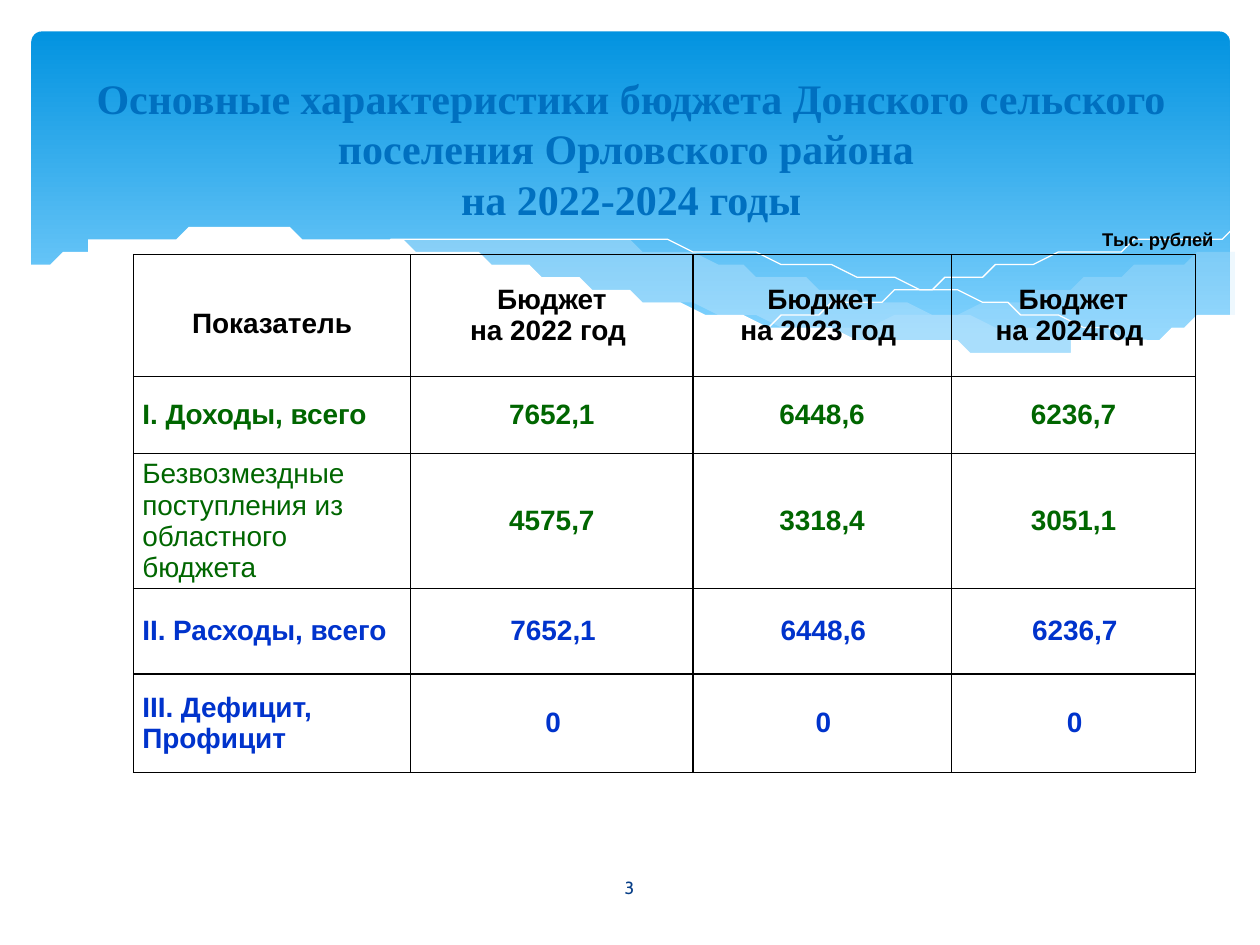
from dataclasses import dataclass
from typing import NamedTuple, Optional

from lxml.etree import SubElement
from pptx import Presentation
from pptx.dml.color import RGBColor
from pptx.enum.shapes import MSO_SHAPE
from pptx.enum.text import MSO_ANCHOR, MSO_AUTO_SIZE, PP_ALIGN
from pptx.oxml.ns import qn
from pptx.util import Inches, Pt

# The slide is a grid of 100 columns by 75 rows of square cells
COLUMNS, ROWS = 100, 75
CELL = Inches(10) // COLUMNS


@dataclass(frozen=True)
class Theme:
    sky_top: str = "0293E0"
    sky_bottom: str = "83D3FE"
    wave: str = "C6E7FC"
    white: str = "FFFFFF"
    black: str = "000000"
    title: str = "0070C0"
    number: str = "073E87"
    income: str = "006600"
    spending: str = "0033CC"
    heading_font: str = "Times New Roman"
    body_font: str = "Arial"
    number_font: str = "Cabin"
    title_size: float = 24
    table_size: float = 16
    unit_size: float = 10.5
    number_size: float = 10


class Box(NamedTuple):
    left: float
    top: float
    width: float
    height: float

    def emu(self) -> list[int]:
        return [grid(v) for v in self]


class Wave(NamedTuple):
    """Edges are smooth curves through their knots, joined end to end."""
    edges: list
    fill: Optional[str] = None
    opacity: int = 100


class BudgetRow(NamedTuple):
    label: str
    values: list
    color: str
    height: float
    indent: float = 0
    bold_label: bool = True


THEME = Theme()

WAVES = [
    Wave([[(97.6, 20), (92.1, 21), (86.1, 22.3), (77.9, 24.2), (66.1, 26.5)],
          [(66.1, 26.5), (73.2, 27.4), (81.4, 27.8), (88.9, 27.2), (94.2, 25.9), (97.6, 24.7)]],
         THEME.wave, 29),
    Wave([[(89.3, 27.3), (80.7, 26), (70.6, 24), (62.9, 22.2), (55.5, 20.5), (46.5, 19.1),
           (36.1, 18.5), (28.6, 19.1)],
          [(28.6, 19.1), (36.2, 20.3), (44.9, 22.2), (56.6, 24.8), (66.5, 26.6), (76.1, 27.7),
           (83.8, 27.8), (89.3, 27.3)]],
         THEME.wave, 40),
    Wave([[(30.9, 19.5), (35.3, 18.9), (41.6, 18.7), (48.9, 19), (58.2, 20), (69.5, 21.9),
           (79.5, 24.1), (90.7, 27.2)]]),
    Wave([[(61.3, 25.7), (69.5, 23.5), (77.6, 21.6), (86.6, 19.9), (92.4, 19), (97.5, 18.5)]]),
    Wave([[(97.7, 24.6), (92, 26.5), (86.3, 27.4), (80.9, 27.7), (72.6, 27.2), (62.6, 25.8),
           (52.9, 23.9), (44.7, 22), (36.5, 20.2), (27.1, 18.8), (19.3, 18.4), (11.9, 18.7),
           (6.7, 19.7), (2.3, 21.3)],
          [(2.3, 32.9), (97.7, 32.9)]],
         THEME.white),
]

TABLE_BOX = Box(10.6, 20.2, 84.3, 41.1)
TABLE_COLUMNS = [22, 22.4, 20.5, 19.4]
HEADER = BudgetRow("Показатель",
                   ["Бюджет\nна 2022 год ", "Бюджет\nна 2023 год ", "Бюджет\nна 2024год "],
                   THEME.black, 9.7)
BUDGET = [
    HEADER,
    BudgetRow("I. Доходы, всего", ["7652,1", "6448,6", "6236,7"], THEME.income, 6.1, -0.7),
    BudgetRow("Безвозмездные поступления из областного бюджета",
              ["4575,7", "3318,4", "3051,1"], THEME.income, 10.7, -0.7, False),
    BudgetRow("II. Расходы, всего", ["7652,1", "6448,6", "6236,7"], THEME.spending, 6.8, 0.2),
    BudgetRow("III. Дефицит, Профицит", ["0", "0", "0"], THEME.spending, 7.8, 0.2),
]


def grid(value: float) -> int:
    return round(value * CELL)


def smooth(knots: list, steps: int = 6) -> list:
    """Catmull-Rom curve through the knots; two knots give a straight line."""
    if len(knots) == 2:
        return knots
    ends = [knots[0], *knots, knots[-1]]
    points = [knots[0]]
    for a, b, c, d in zip(ends, ends[1:], ends[2:], ends[3:]):
        for t in (i / steps for i in range(1, steps + 1)):
            points.append(tuple(
                (2 * q + (r - p) * t + (2 * p - 5 * q + 4 * r - u) * t ** 2
                 + (3 * q - p - 3 * r + u) * t ** 3) / 2
                for p, q, r, u in zip(a, b, c, d)))
    return points


def draw_wave(s, wave: Wave) -> None:
    points = [point for edge in wave.edges for point in smooth(edge)]
    builder = s.shapes.build_freeform(*points[0], scale=CELL)
    builder.add_line_segments(points[1:], close=wave.fill is not None)
    sp = builder.convert_to_shape()
    sp.shadow.inherit = False
    if wave.fill is None:
        sp.fill.background()
        sp.line.color.rgb = RGBColor.from_string(THEME.white)
        sp.line.width = Pt(0)
        return
    sp.line.fill.background()
    sp.fill.solid()
    sp.fill.fore_color.rgb = RGBColor.from_string(wave.fill)
    if wave.opacity < 100:
        color = sp._element.spPr.find(qn("a:solidFill"))[0]
        SubElement(color, qn("a:alpha"), val=str(wave.opacity * 1000))


def draw_sky(s) -> None:
    sp = s.shapes.add_shape(MSO_SHAPE.ROUNDED_RECTANGLE, *Box(2.5, 2.5, 95.1, 27).emu())
    sp.adjustments[0] = 0.03
    sp.shadow.inherit = False
    sp.line.fill.background()
    sp.fill.gradient()
    sp.fill.gradient_angle = 270
    stops = ((0, THEME.sky_top), (0.9, THEME.sky_bottom))
    for stop, (position, color) in zip(sp.fill.gradient_stops, stops):
        stop.position = position
        stop.color.rgb = RGBColor.from_string(color)


def style(p, font: str, size: float, color: str, bold: bool, align) -> None:
    p.alignment = align
    p.font.name, p.font.size, p.font.bold = font, Pt(size), bold
    p.font.color.rgb = RGBColor.from_string(color)


def draw_label(s, box: Box, text: str, font: str, size: float, color: str,
               bold: bool, align, anchor) -> None:
    tf = s.shapes.add_textbox(*box.emu()).text_frame
    tf.word_wrap = True
    tf.vertical_anchor = anchor
    tf.text = text
    style(tf.paragraphs[0], font, size, color, bold, align)


def place_title(s, box: Box, text: str) -> None:
    title = s.shapes.title
    title.left, title.top, title.width, title.height = box.emu()
    tf = title.text_frame
    tf.text = text
    tf.word_wrap = True
    tf.auto_size = MSO_AUTO_SIZE.NONE
    tf.vertical_anchor = MSO_ANCHOR.MIDDLE
    style(tf.paragraphs[0], THEME.heading_font, THEME.title_size, THEME.title, True,
          PP_ALIGN.CENTER)
    title._element.getparent().append(title._element)  # in front of the waves


def fill_cell(cell, text: str, color: str, bold: bool, align, indent: float) -> None:
    cell.text = text
    cell.vertical_anchor = MSO_ANCHOR.MIDDLE
    cell.margin_left = cell.margin_right = grid(0.7)
    cell.margin_top = cell.margin_bottom = 0
    for p in cell.text_frame.paragraphs:
        style(p, THEME.body_font, THEME.table_size, color, bold, align)
        if indent:
            p._p.get_or_add_pPr().set("indent", str(grid(indent)))
    tc_pr = cell._tc.get_or_add_tcPr()
    for side in ("a:lnL", "a:lnR", "a:lnT", "a:lnB"):
        border = SubElement(tc_pr, qn(side), w=str(Pt(1)))
        SubElement(SubElement(border, qn("a:solidFill")), qn("a:srgbClr"), val=THEME.black)
    cell.fill.background()


def draw_budget(s) -> None:
    table = s.shapes.add_table(len(BUDGET), len(TABLE_COLUMNS), *TABLE_BOX.emu()).table
    table.first_row = table.horz_banding = False
    for column, width in zip(table.columns, TABLE_COLUMNS):
        column.width = grid(width)
    for i, row in enumerate(BUDGET):
        table.rows[i].height = grid(row.height)
        is_header = row is HEADER
        fill_cell(table.cell(i, 0), row.label, row.color, row.bold_label,
                  PP_ALIGN.CENTER if is_header else PP_ALIGN.LEFT, -0.7 if is_header else 0)
        for j, value in enumerate(row.values, 1):
            fill_cell(table.cell(i, j), value, row.color, True, PP_ALIGN.CENTER, row.indent)
    table.cell(0, 0).text_frame.paragraphs[0].line_spacing = 1.5


def main() -> None:
    prs = Presentation()
    prs.slide_width, prs.slide_height = COLUMNS * CELL, ROWS * CELL
    s = prs.slides.add_slide(prs.slide_layouts[5])
    # Backdrop
    draw_sky(s)
    for wave in WAVES:
        draw_wave(s, wave)
    # Content
    draw_label(s, Box(43.6, 68.4, 12.7, 4), "3", THEME.number_font, THEME.number_size,
               THEME.number, False, PP_ALIGN.CENTER, MSO_ANCHOR.MIDDLE)
    place_title(s, Box(5.1, 7.4, 90, 8.7),
                "Основные характеристики бюджета Донского сельского поселения "
                "Орловского района \vна 2022-2024 годы")
    draw_budget(s)
    draw_label(s, Box(83.1, 17.6, 14.2, 2.8), "Тыс. рублей", THEME.body_font, THEME.unit_size,
               THEME.black, True, PP_ALIGN.RIGHT, MSO_ANCHOR.TOP)
    prs.save("out.pptx")


if __name__ == "__main__":
    main()
